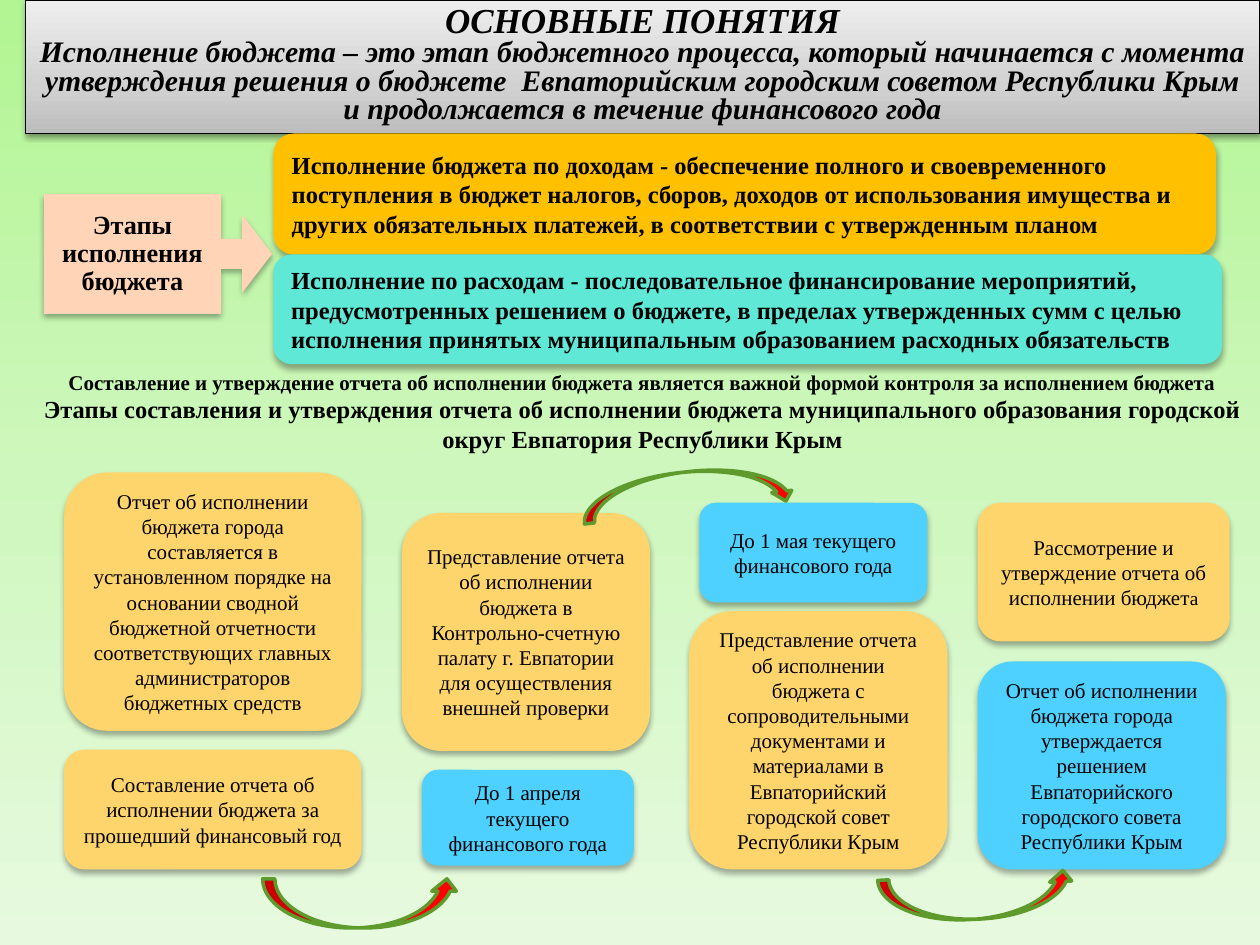
import dataclasses

import lxml.etree
import pptx
import pptx.dml.color
import pptx.enum.shapes
import pptx.enum.text
import pptx.oxml.ns
import pptx.util

SHAPE = pptx.enum.shapes.MSO_SHAPE
ALIGN = pptx.enum.text.PP_ALIGN
ANCHOR = pptx.enum.text.MSO_ANCHOR
qn = pptx.oxml.ns.qn


@dataclasses.dataclass(frozen=True)
class Theme:
    font: str = "Times New Roman"
    ink: str = "000000"
    page: tuple = ((0, "B2F592"), (50, "CEF7BD"), (100, "E7FADF"))
    header: tuple = ((0, "BDBDBD"), (35, "D1D1D1"), (100, "EEEEEE"))
    income: str = "FFC000"
    expense: str = "5FE8D6"
    callout: str = "FFD4B7"
    step: str = "FED46C"
    deadline: str = "4FD1FF"
    arrow: str = "FF0000"
    arrow_edge: str = "5E9B2C"
    title: float = 20
    lead: float = 17
    stage: float = 15
    body: float = 14
    note: float = 12
    small: float = 11


class Board:
    """One slide, measured on a grid of 100 columns by 75 rows."""

    COLUMNS, ROWS = 100, 75

    def __init__(self, deck, theme):
        self.theme = theme
        self.column = deck.slide_width / self.COLUMNS
        self.row = deck.slide_height / self.ROWS
        self.page = deck.slides.add_slide(deck.slide_layouts[6])
        self.gradient(self.page, self.page.background.fill, theme.page, 270)

    def frame(self, place):
        units = (self.column, self.row) * 2
        return [round(length * unit) for length, unit in zip(place, units)]

    def gradient(self, owner, fill, stops, angle):
        """Fill with any number of stops; the angle runs counter-clockwise."""
        fill.gradient()
        fill.gradient_angle = angle
        stop_list = owner.element.find(".//" + qn("a:gsLst"))
        for stop in list(stop_list):
            stop_list.remove(stop)
        for position, colour in stops:
            stop = lxml.etree.SubElement(stop_list, qn("a:gs"), pos=str(position * 1000))
            lxml.etree.SubElement(stop, qn("a:srgbClr"), val=colour)

    def shadow(self, shape, blur, distance, opacity):
        effects = shape.element.find(".//" + qn("a:effectLst"))
        outer = lxml.etree.SubElement(
            effects, qn("a:outerShdw"), blurRad=str(int(pptx.util.Pt(blur))),
            dist=str(int(pptx.util.Pt(distance))), dir="5400000", rotWithShape="0")
        colour = lxml.etree.SubElement(outer, qn("a:srgbClr"), val=self.theme.ink)
        lxml.etree.SubElement(colour, qn("a:alpha"), val=str(opacity * 1000))

    def set_text(self, shape, paragraphs, bold=False, italic=False,
                 align=ALIGN.CENTER, anchor=ANCHOR.MIDDLE, spacing=None):
        """Each paragraph is a list of (text, size) spans."""
        text_frame = shape.text_frame
        text_frame.word_wrap = True
        text_frame.vertical_anchor = anchor
        for index, spans in enumerate(paragraphs):
            para = text_frame.add_paragraph() if index else text_frame.paragraphs[0]
            para.alignment = align
            para.line_spacing = spacing
            for text, size in spans:
                span = para.add_run()
                span.text = text
                span.font.name = self.theme.font
                span.font.size = pptx.util.Pt(size)
                span.font.bold, span.font.italic = bold, italic
                span.font.color.rgb = pptx.dml.color.RGBColor.from_string(self.theme.ink)

    def shape(self, kind, place, fill=None, edge=None, width=0.75):
        shape = self.page.shapes.add_shape(kind, *self.frame(place))
        shape.shadow.inherit = False
        if fill:
            shape.fill.solid()
            shape.fill.fore_color.rgb = pptx.dml.color.RGBColor.from_string(fill)
        if edge:
            shape.line.color.rgb = pptx.dml.color.RGBColor.from_string(edge)
            shape.line.width = pptx.util.Pt(width)
        else:
            shape.line.fill.background()
        return shape

    def header(self, place, paragraphs):
        shape = self.shape(SHAPE.RECTANGLE, place, edge=self.theme.ink)
        self.gradient(shape, shape.fill, self.theme.header, 90)
        self.shadow(shape, 3.1, 1.6, 38)
        self.set_text(shape, paragraphs, bold=True, italic=True,
                      anchor=ANCHOR.TOP, spacing=0.8)

    def card(self, place, fill, spans, kind=SHAPE.ROUNDED_RECTANGLE, **style):
        shape = self.shape(kind, place, fill)
        self.shadow(shape, 3.5, 2.2, 32)
        self.set_text(shape, [spans], **style)
        return shape

    def callout(self, place, text):
        shape = self.card(place, self.theme.callout, [(text, self.theme.stage)],
                          SHAPE.RIGHT_ARROW_CALLOUT, bold=True,
                          spacing=pptx.util.Pt(16))
        for index, value in enumerate((0.25, 0.324, 0.25, 0.775)):
            shape.adjustments[index] = value

    def caption(self, place, paragraphs):
        box = self.page.shapes.add_textbox(*self.frame(place))
        self.set_text(box, paragraphs, bold=True, anchor=ANCHOR.TOP)

    def arrow(self, kind, place, rotation):
        shape = self.shape(kind, place, self.theme.arrow, self.theme.arrow_edge, 2)
        shape.rotation = rotation


def main():
    deck = pptx.Presentation()
    deck.slide_width, deck.slide_height = pptx.util.Inches(10), pptx.util.Inches(7.5)
    theme = Theme()
    board = Board(deck, theme)

    board.header((2, 0, 98, 10.6), [
        [("ОСНОВНЫЕ ПОНЯТИЯ", theme.title)],
        [("Исполнение бюджета – это этап бюджетного процесса, который начинается с момента "
          "утверждения решения о бюджете  Евпаторийским городским советом Республики Крым "
          "и продолжается в течение финансового года", theme.lead)]])

    directions = [
        ((21.7, 10.6, 74.8, 9.6), theme.income,
         "Исполнение бюджета по доходам - обеспечение полного и своевременного поступления "
         "в бюджет налогов, сборов, доходов от использования имущества и других "
         "обязательных платежей, в соответствии с утвержденным планом"),
        ((21.7, 20.2, 75.3, 8.7), theme.expense,
         "Исполнение по расходам - последовательное финансирование мероприятий, "
         "предусмотренных решением о бюджете, в пределах утвержденных сумм с целью "
         "исполнения принятых муниципальным образованием расходных обязательств")]
    for place, fill, text in directions:
        board.card(place, fill, [(text, theme.body)], bold=True, align=ALIGN.LEFT)

    board.callout((3.5, 15.4, 18.1, 9.5), "Этапы исполнения бюджета")
    board.caption((2, 28.8, 98, 7.7), [
        [("Составление и утверждение отчета об исполнении бюджета является важной формой "
          "контроля за исполнением бюджета", theme.note)],
        [("Этапы составления и утверждения отчета об исполнении бюджета муниципального "
          "образования городской округ Евпатория Республики Крым", theme.body)]])

    stages = [
        ((5.1, 37.5, 23.6, 20.5), theme.step,
         "Отчет об исполнении бюджета города составляется в установленном порядке на "
         "основании сводной бюджетной отчетности соответствующих главных администраторов "
         "бюджетных средств"),
        ((5.1, 59.5, 23.6, 9.5), theme.step,
         "Составление отчета об исполнении бюджета за прошедший финансовый год"),
        ((31.9, 40.7, 19.7, 18.9), theme.step,
         "Представление отчета об исполнении бюджета в Контрольно-счетную палату "
         "г. Евпатории для осуществления внешней проверки"),
        ((33.5, 61.1, 16.8, 7.6), theme.deadline, "До 1 апреля текущего финансового года"),
        ((55.5, 39.9, 18.1, 7.9), theme.deadline, "До 1 мая текущего финансового года"),
        ((54.7, 48.5, 20.5, 20.5), theme.step,
         "Представление отчета об исполнении бюджета с сопроводительными документами и "
         "материалами в Евпаторийский городской совет Республики Крым"),
        ((77.6, 52.5, 19.7, 16.5), theme.deadline,
         "Отчет об исполнении бюджета города утверждается решением Евпаторийского "
         "городского совета Республики Крым")]
    for place, fill, text in stages:
        board.card(place, fill, [(text, theme.note)])
    board.card((77.6, 39.9, 20, 11), theme.step, [
        ("Рассмотрение и утверждение отчета об исполнении бюджет", theme.note),
        ("а", theme.small)])

    board.arrow(SHAPE.CURVED_RIGHT_ARROW, (26.7, 63.9, 3.9, 15.6), 270)
    board.arrow(SHAPE.CURVED_RIGHT_ARROW, (75.8, 63.4, 3.5, 15.6), 266.9)
    board.arrow(SHAPE.CURVED_LEFT_ARROW, (53, 30.6, 3.2, 16.9), 263.5)

    deck.save("out.pptx")


if __name__ == "__main__":
    main()
